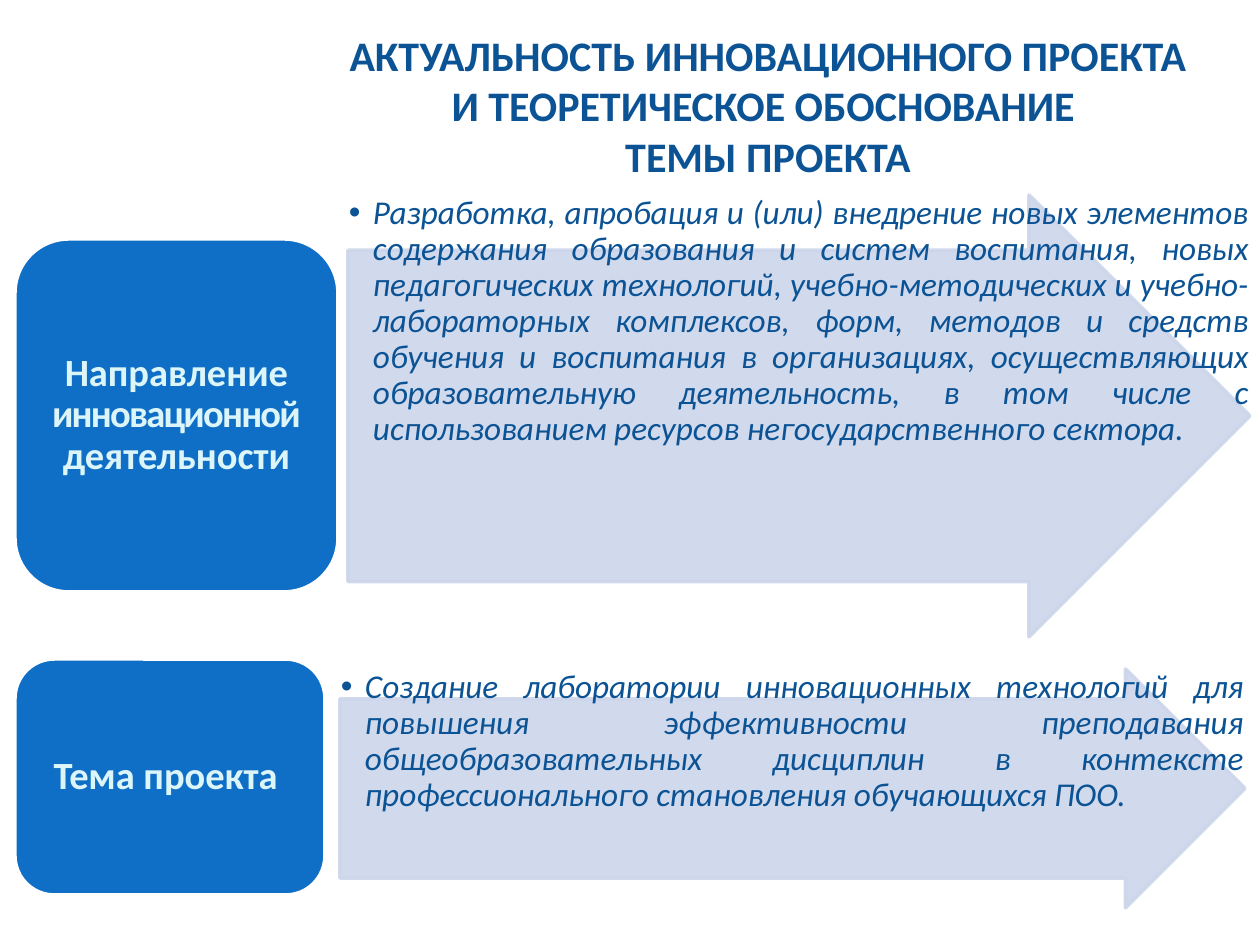
from lxml.etree import SubElement
from pptx import Presentation
from pptx.dml.color import RGBColor
from pptx.enum.shapes import MSO_SHAPE as Shape
from pptx.enum.text import MSO_ANCHOR as Anchor, PP_ALIGN as Align
from pptx.oxml.ns import qn
from pptx.util import Emu, Pt

SCALE = 914400 / 126
TITLE_FONT = {"name": "Calibri", "size": Pt(24), "bold": True}
LABEL_FONT = {"name": "Calibri", "size": Pt(22), "bold": True}
DETAIL_FONT = {"name": "Calibri", "size": Pt(19), "italic": True}
NAVY, BLUE, PALE, ICE, WHITE = "0B5394", "0F6FC6", "CCD5EA", "DBF5F9", "FFFFFF"

TITLE_BOX = (302, 6, 932, 198)
TITLE_LINES = [
    "АКТУАЛЬНОСТЬ ИННОВАЦИОННОГО ПРОЕКТА",
    "И ТЕОРЕТИЧЕСКОЕ ОБОСНОВАНИЕ ",
    "ТЕМЫ ПРОЕКТА",
]
ROWS = [
    {
        "label_box": (15, 239, 323, 353),
        "label": [("Направление ", 0), ("инновационной", -100), (" деятельности", 0)],
        "arrow_box": (348, 195, 902, 442),
        "detail": "Разработка, апробация и (или) внедрение новых элементов содержания "
                  "образования и систем воспитания, новых педагогических технологий, "
                  "учебно-методических и учебно-лабораторных комплексов, форм, методов и "
                  "средств обучения и воспитания в организациях, осуществляющих "
                  "образовательную деятельность, в том числе с использованием ресурсов "
                  "негосударственного сектора.",
    },
    {
        "label_box": (15, 659, 310, 236),
        "label": [("Тема проекта ", 0)],
        "arrow_box": (340, 669, 905, 239),
        "detail": "Создание лаборатории инновационных технологий для повышения "
                  "эффективности преподавания общеобразовательных дисциплин в контексте "
                  "профессионального становления обучающихся ПОО.",
    },
]


def px(length):
    return Emu(round(length * SCALE))


def color(value):
    return RGBColor.from_string(value)


def apply(target, values):
    for name, value in values.items():
        setattr(target, name, value)


def set_frame(frame, anchor, across, down):
    apply(frame, {
        "word_wrap": True, "vertical_anchor": anchor,
        "margin_left": px(across), "margin_right": px(across),
        "margin_top": px(down), "margin_bottom": px(down),
    })
    return frame.paragraphs[0]


def add_span(para, text, font, tint):
    span = para.add_run()
    span.text = text
    apply(span.font, font)
    span.font.color.rgb = color(tint)
    return span


def add_panel(page, kind, box, fill, line):
    panel = page.shapes.add_shape(kind, *map(px, box))
    panel.shadow.inherit = False
    panel.fill.solid()
    panel.fill.fore_color.rgb = color(fill)
    panel.line.color.rgb = color(line)
    panel.line.width = Pt(2)
    return panel


def add_title(page, box):
    frame = page.shapes.add_textbox(*map(px, box)).text_frame
    para = set_frame(frame, Anchor.MIDDLE, 13, 6)
    para.alignment = Align.CENTER
    for index, line in enumerate(TITLE_LINES):
        if index:
            para.add_line_break()
        add_span(para, line, TITLE_FONT, NAVY)


def add_arrow(page, box, detail):
    arrow = add_panel(page, Shape.RIGHT_ARROW, box, PALE, PALE)
    arrow.adjustments[0] = 0.75
    arrow.adjustments[1] = 0.5
    for tint in arrow.element.spPr.iter(qn("a:srgbClr")):
        SubElement(tint, qn("a:alpha"), val="90000")

    frame = page.shapes.add_textbox(*map(px, box)).text_frame
    para = set_frame(frame, Anchor.TOP, 1, 1)
    apply(para, {"alignment": Align.JUSTIFY, "line_spacing": 0.9})
    props = para._p.get_or_add_pPr()
    props.set("marL", str(px(24)))
    props.set("indent", str(px(-24)))
    SubElement(props, qn("a:buFont"), typeface="Arial")
    SubElement(props, qn("a:buChar"), char="•")
    add_span(para, detail, DETAIL_FONT, NAVY)


def add_label(page, box, parts):
    panel = add_panel(page, Shape.ROUNDED_RECTANGLE, box, BLUE, WHITE)
    para = set_frame(panel.text_frame, Anchor.MIDDLE, 11, 6)
    apply(para, {"alignment": Align.CENTER, "line_spacing": 0.9})
    for text, spacing in parts:
        span = add_span(para, text, LABEL_FONT, ICE)
        if spacing:
            span.font._element.set("spc", str(spacing))


def main():
    deck = Presentation()
    apply(deck, {"slide_width": px(1260), "slide_height": px(945)})
    page = deck.slides.add_slide(deck.slide_layouts[6])
    add_title(page, TITLE_BOX)
    for row in ROWS:
        add_arrow(page, row["arrow_box"], row["detail"])
        add_label(page, row["label_box"], row["label"])
    deck.save("out.pptx")


if __name__ == "__main__":
    main()
